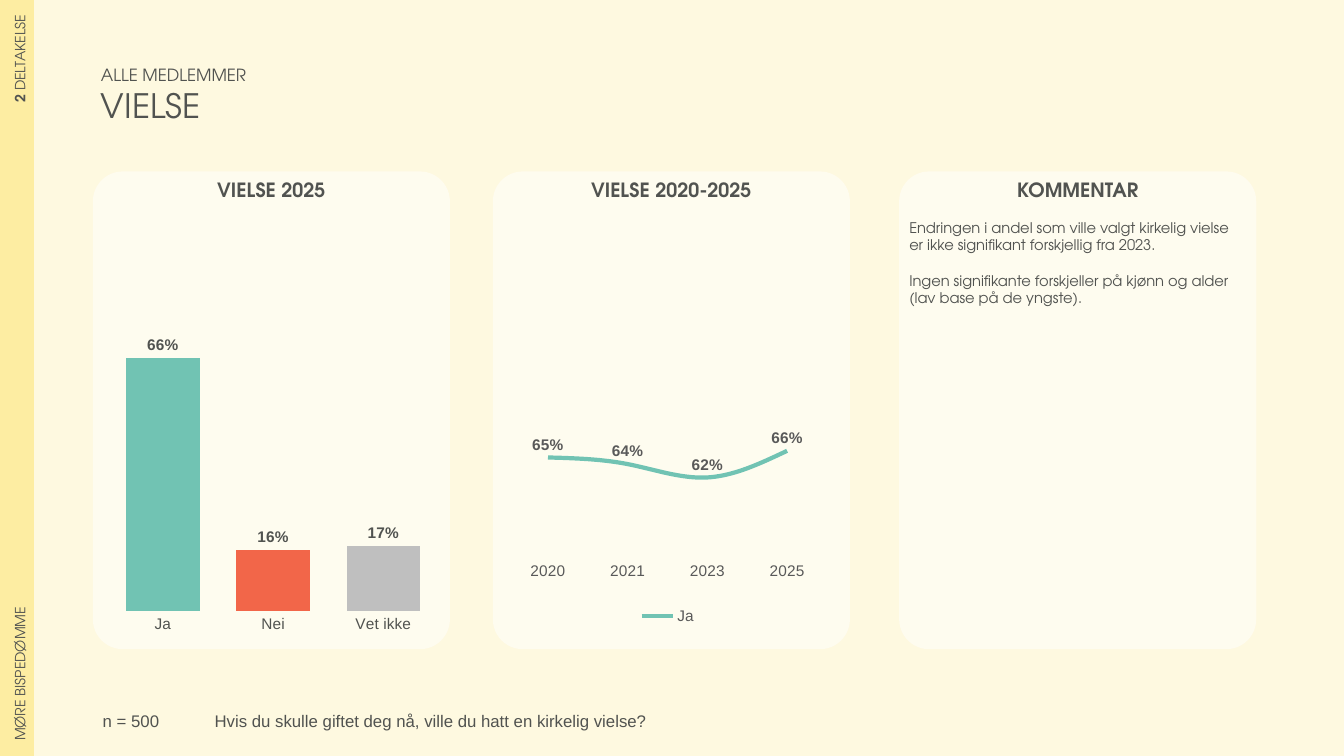
"""Build a slide on church weddings with two charts and a comment."""
from dataclasses import dataclass

from pptx import Presentation
from pptx.chart.data import CategoryChartData
from pptx.dml.color import RGBColor
from pptx.enum.chart import XL_CHART_TYPE, XL_LABEL_POSITION, XL_LEGEND_POSITION, XL_TICK_MARK
from pptx.enum.shapes import MSO_SHAPE
from pptx.enum.text import MSO_ANCHOR, MSO_AUTO_SIZE, PP_ALIGN
from pptx.oxml import parse_xml
from pptx.oxml.ns import nsdecls, qn
from pptx.util import Cm, Pt

COLUMN, LINE = XL_CHART_TYPE.COLUMN_CLUSTERED, XL_CHART_TYPE.LINE
OUTSIDE, ABOVE = XL_LABEL_POSITION.OUTSIDE_END, XL_LABEL_POSITION.ABOVE
LEGEND_RIGHT, NO_TICK = XL_LEGEND_POSITION.RIGHT, XL_TICK_MARK.NONE
ROUNDED = MSO_SHAPE.ROUNDED_RECTANGLE
TOP, MIDDLE = MSO_ANCHOR.TOP, MSO_ANCHOR.MIDDLE
NO_AUTO_SIZE = MSO_AUTO_SIZE.NONE
LEFT, CENTER, RIGHT = PP_ALIGN.LEFT, PP_ALIGN.CENTER, PP_ALIGN.RIGHT
NO_STYLE_NO_GRID = "{2D5ABB26-0587-4C30-8999-92F81FD0307C}"
PANEL_LEFTS = (2.34, 12.42, 22.66)
PANEL_TOP, PANEL_WIDTH, PANEL_HEIGHT = 4.32, 9, 12.04


@dataclass(frozen=True)
class Theme:
    """Colours, fonts and type sizes."""
    background: str = "FEF9E0"
    sidebar: str = "FDEDA2"
    panel: str = "FFFFFF"
    text: str = "515350"
    soft_text: str = "595959"
    yes: str = "71C3B3"
    no: str = "F26649"
    unsure: str = "BFBFBF"
    display_font: str = "TeX Gyre Adventor"
    plain_font: str = "Arial"
    title: float = 24
    heading: float = 14
    note: float = 12
    chart: float = 11
    comment: float = 10.5
    sidebar_size: float = 10


def style_font(font, size, color, name, bold=False):
    """Apply one set of font properties."""
    font.size, font.name, font.bold = Pt(size), name, bold
    font.color.rgb = RGBColor.from_string(color)


def paint(fill, color):
    """Give a fill one solid colour."""
    fill.solid()
    fill.fore_color.rgb = RGBColor.from_string(color)


def place_in_chart(parent, index, box):
    """Set a manual layout on a chart part as fractions of the chart."""
    for layout in parent.findall(qn("c:layout")):
        parent.remove(layout)
    target = '<c:layoutTarget val="inner"/>' if parent.tag == qn("c:plotArea") else ""
    modes = '<c:xMode val="edge"/><c:yMode val="edge"/>'
    values = "".join(f'<c:{key} val="{value}"/>' for key, value in zip("xywh", box))
    parent.insert(index, parse_xml(
        f'<c:layout {nsdecls("c")}><c:manualLayout>{target}{modes}{values}'
        "</c:manualLayout></c:layout>"))


class SlideBuilder:
    """Draw styled elements on the current slide."""

    def __init__(self, presentation, theme):
        """Add a slide with the theme background."""
        self.theme = theme
        self.slide = presentation.slides.add_slide(presentation.slide_layouts[1])
        paint(self.slide.background.fill, theme.background)

    def set_text(self, shape, lines, size, **options):
        """Fill a text shape with evenly styled paragraphs."""
        frame = shape.text_frame
        frame.word_wrap = True
        frame.auto_size = NO_AUTO_SIZE
        frame.vertical_anchor = options.get("anchor", TOP)
        frame.text = "\n".join(lines)
        for paragraph in frame.paragraphs:
            paragraph.alignment = options.get("align", LEFT)
            paragraph.space_before = Pt(0)
            style_font(paragraph.font, size, self.theme.text,
                       options.get("name", self.theme.display_font), options.get("bold", False))
        return frame.paragraphs

    def move(self, shape, left, top, width, height):
        """Place a shape in centimetres."""
        shape.left, shape.top, shape.width, shape.height = map(Cm, (left, top, width, height))

    def title(self, kicker, title):
        """Set the small line and the title below it."""
        shape = self.slide.shapes.title
        self.move(shape, 2.29, 1.5, 26.8, 1.8)
        paragraphs = self.set_text(shape, [kicker, title], self.theme.title, anchor=MIDDLE)
        paragraphs[0].font.size = Pt(self.theme.note)

    def comment(self, left, lines):
        """Set the comment without bullets."""
        shape = self.slide.placeholders[1]
        self.move(shape, left, 5.38, PANEL_WIDTH, 2.6)
        for index, paragraph in enumerate(self.set_text(shape, lines, self.theme.comment)):
            properties = paragraph._p.get_or_add_pPr()
            properties.set("marL", "0")
            properties.set("indent", "0")
            spacing = properties.find(qn("a:spcBef"))
            spacing.addnext(parse_xml(f'<a:buNone {nsdecls("a")}/>'))
            if index:
                paragraph.space_before = Pt(12.6)

    def text(self, box, line, size, **options):
        """Add a one-line text box."""
        self.set_text(self.slide.shapes.add_textbox(*map(Cm, box)), [line], size, **options)

    def panel(self, left, heading):
        """Add a translucent rounded panel behind a heading."""
        box = (left, PANEL_TOP, PANEL_WIDTH, PANEL_HEIGHT)
        shape = self.slide.shapes.add_shape(ROUNDED, *map(Cm, box))
        shape.adjustments[0] = 0.084
        shape.shadow.inherit = False
        shape.line.fill.background()
        paint(shape.fill, self.theme.panel)
        color = shape._element.spPr.find(f'{qn("a:solidFill")}/{qn("a:srgbClr")}')
        color.append(parse_xml(f'<a:alpha {nsdecls("a")} val="50000"/>'))
        self.slide.shapes._spTree.insert(2, shape._element)
        self.text((left, PANEL_TOP + 0.03, PANEL_WIDTH, 0.86), heading, self.theme.heading,
                  align=CENTER, bold=True)

    def sidebar(self, number, chapter, region):
        """Add the vertical sidebar table."""
        frame = self.slide.shapes.add_table(2, 1, 0, 0, Cm(0.86), Cm(19.05))
        table = frame.table
        table.first_row = table.horz_banding = False
        table._tbl.tblPr.find(qn("a:tableStyleId")).text = NO_STYLE_NO_GRID
        for row, (texts, align) in enumerate((((number, f" {chapter}"), RIGHT), ((region,), LEFT))):
            cell = table.cell(row, 0)
            cell.margin_left = cell.margin_right = cell.margin_top = cell.margin_bottom = Cm(0.38)
            cell.vertical_anchor = MIDDLE
            paint(cell.fill, self.theme.sidebar)
            cell._tc.get_or_add_tcPr().set("vert", "vert270")
            paragraph = cell.text_frame.paragraphs[0]
            paragraph.alignment = align
            for text in texts:
                run = paragraph.add_run()
                run.text = text
                style_font(run.font, self.theme.sidebar_size, self.theme.text,
                           self.theme.display_font, text == number)

    def chart(self, kind, left, name, values, minimum, plot_box, color, label_position):
        """Add a chart with direct percentage labels and return it."""
        theme = self.theme
        data = CategoryChartData(number_format="0%")
        data.categories = values.keys()
        data.add_series(name, values.values())
        box = (left, PANEL_TOP, PANEL_WIDTH, PANEL_HEIGHT)
        chart = self.slide.shapes.add_chart(kind, *map(Cm, box), data).chart
        chart.has_title = chart.has_legend = False
        style_font(chart.font, theme.chart, color, theme.plain_font)
        place_in_chart(chart._chartSpace.chart.plotArea, 0, plot_box)
        value_axis, category_axis = chart.value_axis, chart.category_axis
        value_axis.minimum_scale, value_axis.maximum_scale = minimum, 1
        value_axis.has_major_gridlines = value_axis.visible = False
        category_axis.major_tick_mark = category_axis.minor_tick_mark = NO_TICK
        category_axis.format.line.fill.background()
        plot = chart.plots[0]
        plot.vary_by_categories = False
        plot.has_data_labels = True
        labels = plot.data_labels
        labels.show_value, labels.position = True, label_position
        labels.number_format, labels.number_format_is_linked = "0%", False
        style_font(labels.font, theme.chart, color, theme.plain_font, True)
        return chart

    def column_chart(self, left, values):
        """Add the answer distribution."""
        theme = self.theme
        chart = self.chart(COLUMN, left, "Series 1", values, 0, (0.042, 0.117, 0.926, 0.803),
                           theme.text, OUTSIDE)
        plot = chart.plots[0]
        plot.gap_width, plot.overlap = 50, -27
        series = plot.series[0]
        paint(series.format.fill, theme.yes)
        for index, color in enumerate((theme.no, theme.unsure), 1):
            paint(series.points[index].format.fill, color)

    def line_chart(self, left, name, values):
        """Add the trend over time with its legend."""
        theme = self.theme
        chart = self.chart(LINE, left, name, values, 0.5, (0.043, 0.111, 0.893, 0.697),
                           theme.soft_text, ABOVE)
        series = chart.plots[0].series[0]
        series.smooth = True
        series.format.line.width = Pt(3)
        paint(series.format.line.fill, theme.yes)
        chart.has_legend = True
        chart.legend.position = LEGEND_RIGHT
        chart.legend.include_in_layout = False
        style_font(chart.legend.font, theme.chart, theme.soft_text, theme.plain_font)
        place_in_chart(chart.legend._element, 1, (0.4, 0.9, 0.18, 0.06))


def main():
    """Compose and save the slide."""
    presentation = Presentation()
    presentation.slide_width, presentation.slide_height = Cm(33.87), Cm(19.05)
    theme = Theme()
    builder = SlideBuilder(presentation, theme)
    builder.sidebar("2", "DELTAKELSE", "MØRE BISPEDØMME")
    builder.title("ALLE MEDLEMMER", "VIELSE")
    for left, heading in zip(PANEL_LEFTS, ("VIELSE 2025", "VIELSE 2020-2025", "KOMMENTAR")):
        builder.panel(left, heading)
    builder.column_chart(PANEL_LEFTS[0], {"Ja": 0.66, "Nei": 0.16, "Vet ikke": 0.17})
    builder.line_chart(PANEL_LEFTS[1], "Ja",
                       {"2020": 0.65, "2021": 0.64, "2023": 0.62, "2025": 0.66})
    builder.comment(PANEL_LEFTS[2], [
        "Endringen i andel som ville valgt kirkelig vielse er ikke signifikant forskjellig fra 2023.",
        "Ingen signifikante forskjeller på kjønn og alder (lav base på de yngste)."])
    for left, width, line in (
            (2.34, 2.8, "n = 500"),
            (5.16, 26.4, "Hvis du skulle giftet deg nå, ville du hatt en kirkelig vielse?")):
        builder.text((left, 17.78, width, 0.69), line, theme.note, name=theme.plain_font)
    presentation.save("out.pptx")


if __name__ == "__main__":
    main()
